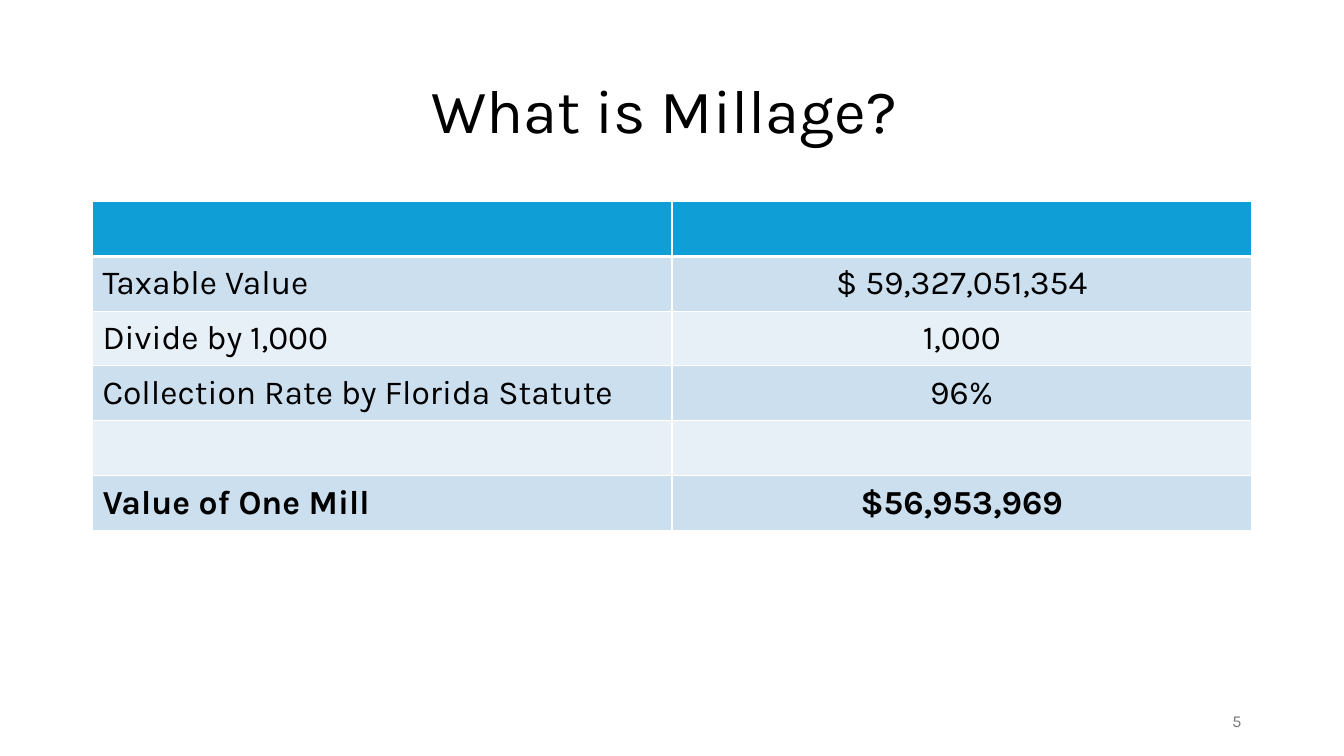
"""Build the millage slide: a title, a calculation table and the page number."""
from pptx import Presentation
from pptx.dml.color import RGBColor
from pptx.enum.text import MSO_ANCHOR as Anchor, PP_ALIGN as Align
from pptx.oxml import parse_xml
from pptx.oxml.ns import nsdecls
from pptx.util import Cm, Pt


def color(value):
    return RGBColor.from_string(value)


def write(frame, text, size, ink, align, bold=False):
    frame.word_wrap = True
    para = frame.paragraphs[0]
    para.text = text
    para.alignment = align
    para.font.name = "Karla"
    para.font.size = Pt(size)
    para.font.bold = bold
    para.font.color.rgb = color(ink)
    return para


deck = Presentation()
deck.slide_width, deck.slide_height = Cm(33.87), Cm(19.05)
slide = deck.slides.add_slide(deck.slide_layouts[6])

title = slide.shapes.add_textbox(Cm(2.33), Cm(1.01), Cm(29.21), Cm(3.68)).text_frame
title.vertical_anchor = Anchor.MIDDLE
write(title, "What is Millage? ", 44, "000000", Align.CENTER).line_spacing = 0.9

rows = [
    ("", ""),
    ("Taxable Value", "$ 59,327,051,354"),
    ("Divide by 1,000", "1,000"),
    ("Collection Rate by Florida Statute", "96%"),
    ("", ""),
    ("Value of One Mill", "$56,953,969"),
]
table = slide.shapes.add_table(
    len(rows), 2, Cm(2.33), Cm(5.08), Cm(29.21), Cm(8.28)
).table

for row_index, row in enumerate(rows):
    is_header = row_index == 0
    is_total = row_index == len(rows) - 1
    band = "0F9ED5" if is_header else ("E7F0F7", "CCDFEF")[row_index % 2]
    for column_index, text in enumerate(row):
        cell = table.cell(row_index, column_index)
        cell.vertical_anchor = Anchor.MIDDLE
        properties = cell._tc.get_or_add_tcPr()
        for side in "LRTB":
            thick = (is_header and side == "B") or (row_index == 1 and side == "T")
            properties.append(parse_xml(
                f'<a:ln{side} {nsdecls("a")} w="{Pt(3 if thick else 1)}">'
                '<a:solidFill><a:srgbClr val="FFFFFF"/></a:solidFill>'
                f'</a:ln{side}>'
            ))
        cell.fill.solid()
        cell.fill.fore_color.rgb = color(band)
        align = Align.CENTER if column_index else Align.LEFT
        write(cell.text_frame, text, 24, "000000", align, is_total)

number = slide.shapes.add_textbox(Cm(23.92), Cm(17.66), Cm(7.62), Cm(1.01)).text_frame
number.vertical_anchor = Anchor.MIDDLE
write(number, "5", 12, "797979", Align.RIGHT)

deck.save("out.pptx")
